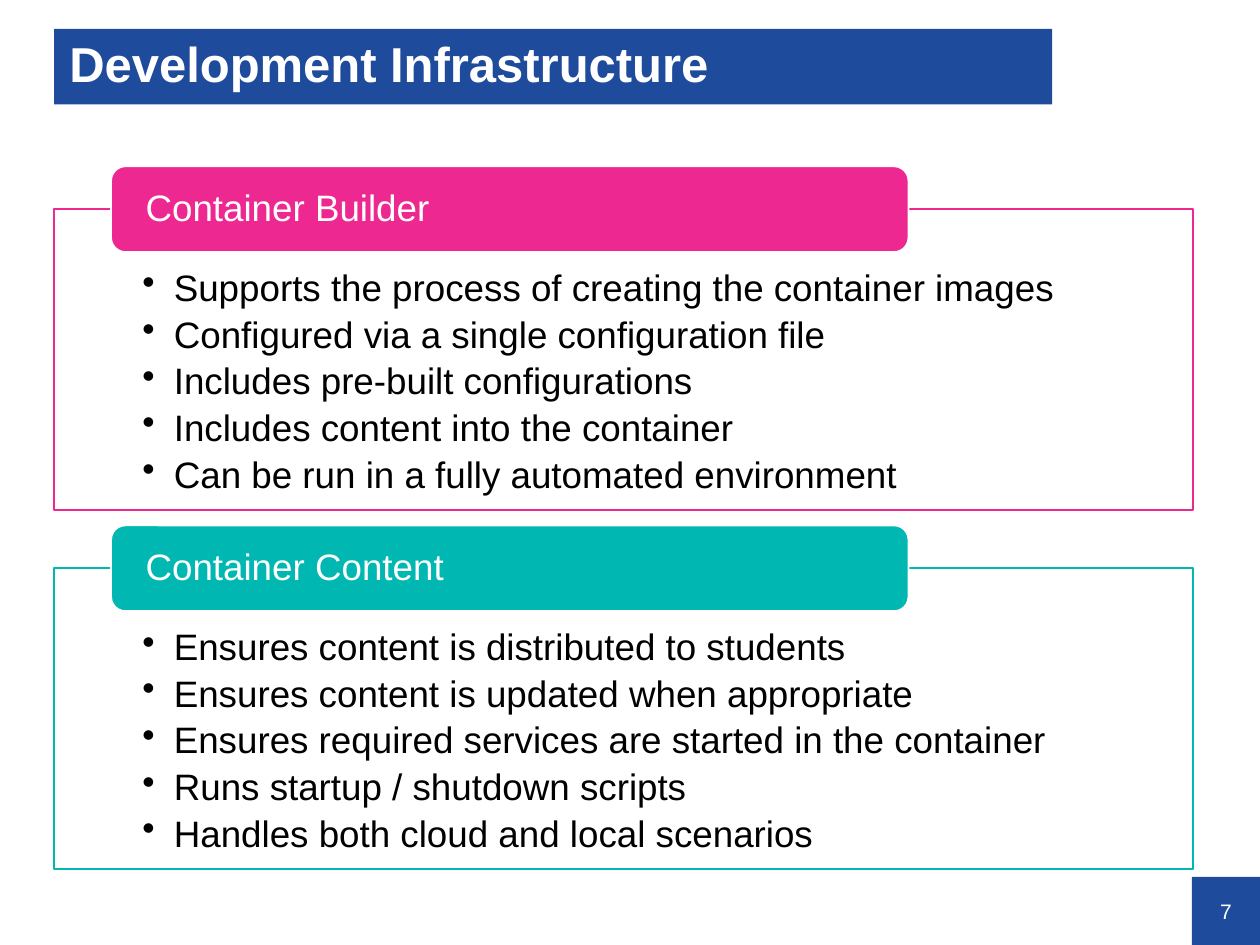
from lxml import etree
from pptx import Presentation
from pptx import util as u
from pptx.dml.color import RGBColor
from pptx.enum import shapes, text
from pptx.oxml.ns import qn

Inches = u.Inches
COLORS = {
    "blue": "1E4B9B",
    "pink": "ED2891",
    "teal": "00B7B2",
    "white": "FFFFFF",
    "black": "000000",
}
SECTIONS = [
    ("Container Builder", "pink", [
        "Supports the process of creating the container images",
        "Configured via a single configuration file",
        "Includes pre-built configurations",
        "Includes content into the container",
        "Can be run in a fully automated environment",
    ]),
    ("Container Content", "teal", [
        "Ensures content is distributed to students",
        "Ensures content is updated when appropriate",
        "Ensures required services are started in the container",
        "Runs startup / shutdown scripts",
        "Handles both cloud and local scenarios",
    ]),
]


def rgb(name):
    return RGBColor.from_string(COLORS[name])


def add_box(slide, box, fill, line=None, kind=shapes.MSO_SHAPE.RECTANGLE, opacity=None):
    shape = slide.shapes.add_shape(kind, *map(Inches, box))
    shape.shadow.inherit = False
    shape.fill.solid()
    shape.fill.fore_color.rgb = rgb(fill)
    if opacity:
        color = shape.fill._xPr.find(qn("a:solidFill"))[0]
        etree.SubElement(color, qn("a:alpha"), val=str(opacity * 1000))
    if line:
        shape.line.color.rgb = rgb(line)
        shape.line.width = u.Pt(1)
    else:
        shape.line.fill.background()
    return shape


def add_bullet(paragraph, indent):
    paragraph.level = 1
    properties = paragraph._p.get_or_add_pPr()
    properties.set("marL", str(Inches(indent)))
    properties.set("indent", str(-Inches(indent)))
    etree.SubElement(properties, qn("a:buChar"), char="•")


def set_text(shape, lines, size, color="white", bold=False, insets=(0, 0, 0, 0),
             anchor=text.MSO_ANCHOR.MIDDLE, align=text.PP_ALIGN.LEFT,
             line_spacing=0.9, space_after=0, bullets=False):
    frame = shape.text_frame
    frame.word_wrap = True
    frame.vertical_anchor = anchor
    (frame.margin_left, frame.margin_top,
     frame.margin_right, frame.margin_bottom) = map(Inches, insets)
    for index, line in enumerate(lines):
        paragraph = frame.add_paragraph() if index else frame.paragraphs[0]
        if bullets:
            add_bullet(paragraph, 0.25)
        paragraph.alignment = align
        paragraph.line_spacing = line_spacing
        paragraph.space_after = u.Pt(space_after)
        run = paragraph.add_run()
        run.text = line
        run.font.name = "Arial"
        run.font.size = u.Pt(size)
        run.font.bold = bold
        run.font.color.rgb = rgb(color)


def add_title(slide, box, title):
    banner = add_box(slide, box, "blue")
    set_text(banner, [title], 28, bold=True, insets=(0.12, 0.04, 0.12, 0.04))


def add_page_number(slide, box, number):
    badge = add_box(slide, box, "blue")
    set_text(badge, [str(number)], 12, align=text.PP_ALIGN.CENTER, line_spacing=1.0)


def add_section(slide, box, heading, color, points):
    left, top, width, height = box
    tab_height = 0.68
    panel_box = (left, top + tab_height / 2, width, height - tab_height / 2)
    panel = add_box(slide, panel_box, "white", line=color, opacity=90)
    set_text(panel, points, 21, color="black", insets=(0.7, 0.48, 0.7, 0.16),
             anchor=text.MSO_ANCHOR.TOP, space_after=4, bullets=True)
    tab_box = (left + 0.05 * width, top, 0.7 * width, tab_height)
    tab = add_box(slide, tab_box, color, line="white",
                  kind=shapes.MSO_SHAPE.ROUNDED_RECTANGLE)
    set_text(tab, [heading], 21, insets=(0.24, 0, 0.24, 0))


def main():
    presentation = Presentation()
    presentation.slide_width = Inches(10)
    presentation.slide_height = Inches(7.5)
    slide = presentation.slides.add_slide(presentation.slide_layouts[6])
    add_page_number(slide, (9.46, 6.96, 0.54, 0.54), 7)
    add_title(slide, (0.43, 0.23, 7.92, 0.6), "Development Infrastructure")
    for index, section in enumerate(SECTIONS):
        add_section(slide, (0.43, 1.32 + index * 2.85, 9.04, 2.73), *section)
    presentation.save("out.pptx")


if __name__ == "__main__":
    main()
